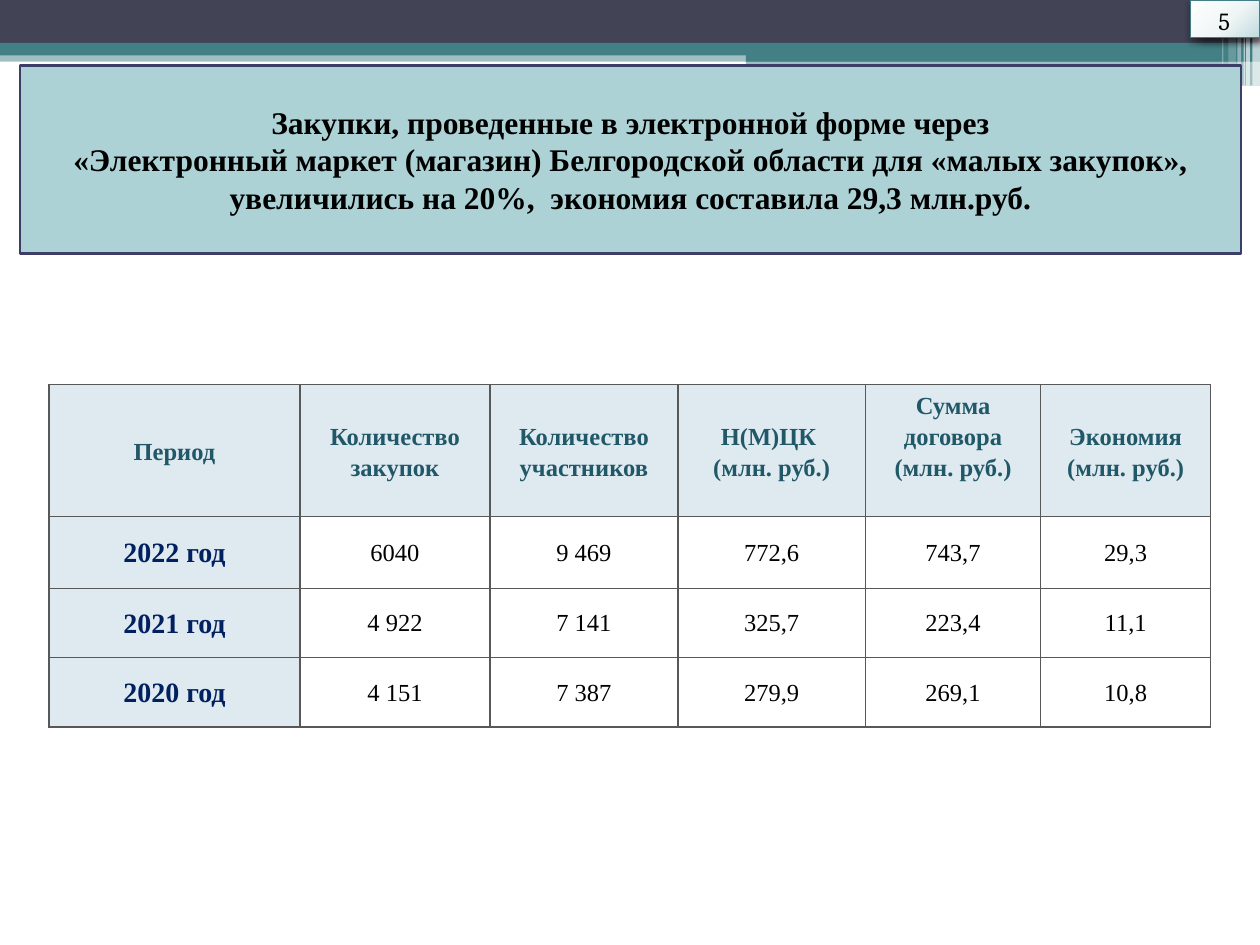
from lxml import etree
from pptx import Presentation
from pptx.dml.color import RGBColor
from pptx.enum.shapes import MSO_SHAPE
from pptx.enum.text import MSO_ANCHOR, MSO_AUTO_SIZE, PP_ALIGN
from pptx.oxml import parse_xml
from pptx.oxml.ns import nsdecls, qn
from pptx.util import Inches, Pt

RECTANGLE = MSO_SHAPE.RECTANGLE
CENTER, LEFT = PP_ALIGN.CENTER, PP_ALIGN.LEFT
MIDDLE, TOP = MSO_ANCHOR.MIDDLE, MSO_ANCHOR.TOP
NO_AUTOFIT = MSO_AUTO_SIZE.NONE

HEADLINE = [
    "Закупки, проведенные в электронной форме через",
    "«Электронный маркет (магазин) Белгородской области для «малых закупок», "
    "увеличились на 20%,  экономия составила 29,3 млн.руб.",
]
PAGE_NUMBER = "5"
HEADERS = [
    ["Период"],
    ["Количество закупок"],
    ["Количество участников"],
    ["Н(М)ЦК ", "(млн. руб.)"],
    ["Сумма договора", "(млн. руб.)"],
    ["Экономия", "(млн. руб.)"],
]
PURCHASES = [
    ["2022 год", "6040", "9 469", "772,6", "743,7", "29,3"],
    ["2021 год", "4 922", "7 141", "325,7", "223,4", "11,1"],
    ["2020 год", "4 151", "7 387", "279,9", "269,1", "10,8"],
]
COLUMN_WIDTHS = [1.99, 1.51, 1.49, 1.49, 1.39, 1.35]
ROW_HEIGHTS = [1.05, 0.57, 0.55, 0.55]
CONTRACT_SUM_COLUMN = 4

COLORS = {
    "navy": "424456", "teal": "438086", "white": "FFFFFF", "black": "000000",
    "banner": "ADD2D6", "banner_line": "3D3E66",
    "head_fill": "DEE9F0", "head_text": "215868", "year": "002060", "grid": "585858",
}
BADGE_STOPS = [(0, "FEFEFE"), (55, "F0F6F6"), (100, "BFD9DD")]
SERIF, BADGE_FONT = "Times New Roman", "Cambria"

BANDS = [
    (0, 0.4, 10, 0.09, "teal", 50),
    (0, 0, 10, 0.34, "navy", 100),
    (0, 0.34, 10, 0.1, "teal", 100),
    (5.92, 0.39, 4.08, 0.1, "teal", 100),
    (5.92, 0.48, 4.08, 0.2, "teal", 50),
]
STRIPES = [
    (9.94, 0.06, 0.68, 65), (9.89, 0.03, 0.68, 65), (9.87, 0.01, 0.68, 60),
    (9.82, 0.03, 0.68, 40), (9.75, 0.06, 0.64, 20), (9.7, 0.01, 0.64, 30),
]


def rgb(name):
    return RGBColor.from_string(COLORS[name])


def add_rectangle(slide, left, top, width, height, color, opacity=100):
    rectangle = slide.shapes.add_shape(
        RECTANGLE, Inches(left), Inches(top), Inches(width), Inches(height))
    rectangle.shadow.inherit = False
    rectangle.line.fill.background()
    rectangle.fill.solid()
    rectangle.fill.fore_color.rgb = rgb(color)
    if opacity < 100:
        tint = rectangle._element.spPr.find(".//" + qn("a:srgbClr"))
        etree.SubElement(tint, qn("a:alpha"), val=str(opacity * 1000))
    return rectangle


def add_run(paragraph, text, size, color, bold=False, font=SERIF):
    run = paragraph.add_run()
    run.text = text
    run.font.name = font
    run.font.size = Pt(size)
    run.font.bold = bold
    run.font.color.rgb = rgb(color)


def add_badge(slide, left):
    badge = add_rectangle(slide, left, 0, 10 - left, 0.3, "white")
    badge.line.color.rgb = rgb("teal")
    badge.line.width = Pt(0.75)
    properties = badge._element.spPr
    stops = "".join(f'<a:gs pos="{position * 1000}"><a:srgbClr val="{color}"/></a:gs>'
                    for position, color in BADGE_STOPS)
    gradient = parse_xml(
        f'<a:gradFill {nsdecls("a")} rotWithShape="1"><a:gsLst>{stops}</a:gsLst>'
        '<a:path path="circle"><a:fillToRect l="-40000" t="-90000" r="140000" b="190000"/>'
        '</a:path></a:gradFill>')
    properties.replace(properties.find(qn("a:solidFill")), gradient)
    shadow = parse_xml(
        f'<a:outerShdw {nsdecls("a")} blurRad="{Pt(4.1)}" dist="{Pt(2)}" dir="5400000" '
        f'rotWithShape="0"><a:srgbClr val="{COLORS["black"]}"><a:alpha val="40000"/>'
        '</a:srgbClr></a:outerShdw>')
    properties.find(qn("a:effectLst")).append(shadow)
    return badge


def add_borders(cell):
    properties = cell._tc.get_or_add_tcPr()
    for index, side in enumerate(("lnL", "lnR", "lnT", "lnB")):
        properties.insert(index, parse_xml(
            f'<a:{side} {nsdecls("a")} w="{Pt(1)}"><a:solidFill>'
            f'<a:srgbClr val="{COLORS["grid"]}"/></a:solidFill></a:{side}>'))


def fill_cell(cell, lines, size, color, bold, shaded, margins, spacing=1.0):
    cell.vertical_anchor = MIDDLE
    cell.margin_left, cell.margin_top, cell.margin_right, cell.margin_bottom = map(Inches, margins)
    for index, line in enumerate(lines):
        frame = cell.text_frame
        paragraph = frame.add_paragraph() if index else frame.paragraphs[0]
        paragraph.alignment = CENTER
        paragraph.line_spacing = spacing
        add_run(paragraph, line, size, color, bold)
    if shaded:
        cell.fill.solid()
        cell.fill.fore_color.rgb = rgb("head_fill")
    else:
        cell.fill.background()
    add_borders(cell)


def format_headline(title):
    title.left, title.top, title.width, title.height = map(Inches, (0.16, 0.52, 9.69, 1.49))
    title._element.spPr.find(qn("a:xfrm")).addnext(parse_xml(
        f'<a:prstGeom {nsdecls("a")} prst="roundRect"><a:avLst>'
        '<a:gd name="adj" fmla="val 1000"/></a:avLst></a:prstGeom>'))
    title.fill.solid()
    title.fill.fore_color.rgb = rgb("banner")
    title.line.color.rgb = rgb("banner_line")
    title.line.width = Pt(1.5)
    frame = title.text_frame
    frame.word_wrap = True
    frame.auto_size = NO_AUTOFIT
    frame.vertical_anchor = MIDDLE
    paragraph = frame.paragraphs[0]
    paragraph.alignment = CENTER
    for index, line in enumerate(HEADLINE):
        if index:
            paragraph.add_line_break()
        add_run(paragraph, line, 18, "black", True)


def add_purchases_table(slide):
    table = slide.shapes.add_table(
        len(ROW_HEIGHTS), len(COLUMN_WIDTHS), Inches(0.39), Inches(3.05),
        Inches(sum(COLUMN_WIDTHS)), Inches(sum(ROW_HEIGHTS))).table
    for column, width in zip(table.columns, COLUMN_WIDTHS):
        column.width = Inches(width)
    for row, height in zip(table.rows, ROW_HEIGHTS):
        row.height = Inches(height)
    for index, lines in enumerate(HEADERS):
        bottom = 0.24 if index == CONTRACT_SUM_COLUMN else 0
        fill_cell(table.cell(0, index), lines, 14, "head_text", True, True,
                  (0.06, 0, 0.06, bottom), 1.15)
    for row, values in enumerate(PURCHASES, 1):
        for column, value in enumerate(values):
            is_year = column == 0
            fill_cell(table.cell(row, column), [value], 16 if is_year else 14,
                      "year" if is_year else "black", is_year, is_year,
                      (0.01, 0.01, 0.01, 0))


def main():
    deck = Presentation()
    deck.slide_width, deck.slide_height = Inches(10), Inches(7.5)
    slide = deck.slides.add_slide(deck.slide_layouts[5])
    for band in BANDS:
        add_rectangle(slide, *band)
    for left, width, height, opacity in STRIPES:
        add_rectangle(slide, left, 0, width, height, "white", opacity)

    title = slide.shapes.title
    format_headline(title)
    title._element.getparent().append(title._element)

    add_badge(slide, 9.53)
    page_badge = add_badge(slide, 9.45)
    frame = page_badge.text_frame
    frame.vertical_anchor = TOP
    frame.margin_left = Inches(0.22)
    number = frame.paragraphs[0]
    number.alignment = LEFT
    number.space_before = Pt(3)
    add_run(number, PAGE_NUMBER, 14, "black", font=BADGE_FONT)

    add_purchases_table(slide)
    deck.save("out.pptx")


if __name__ == "__main__":
    main()
